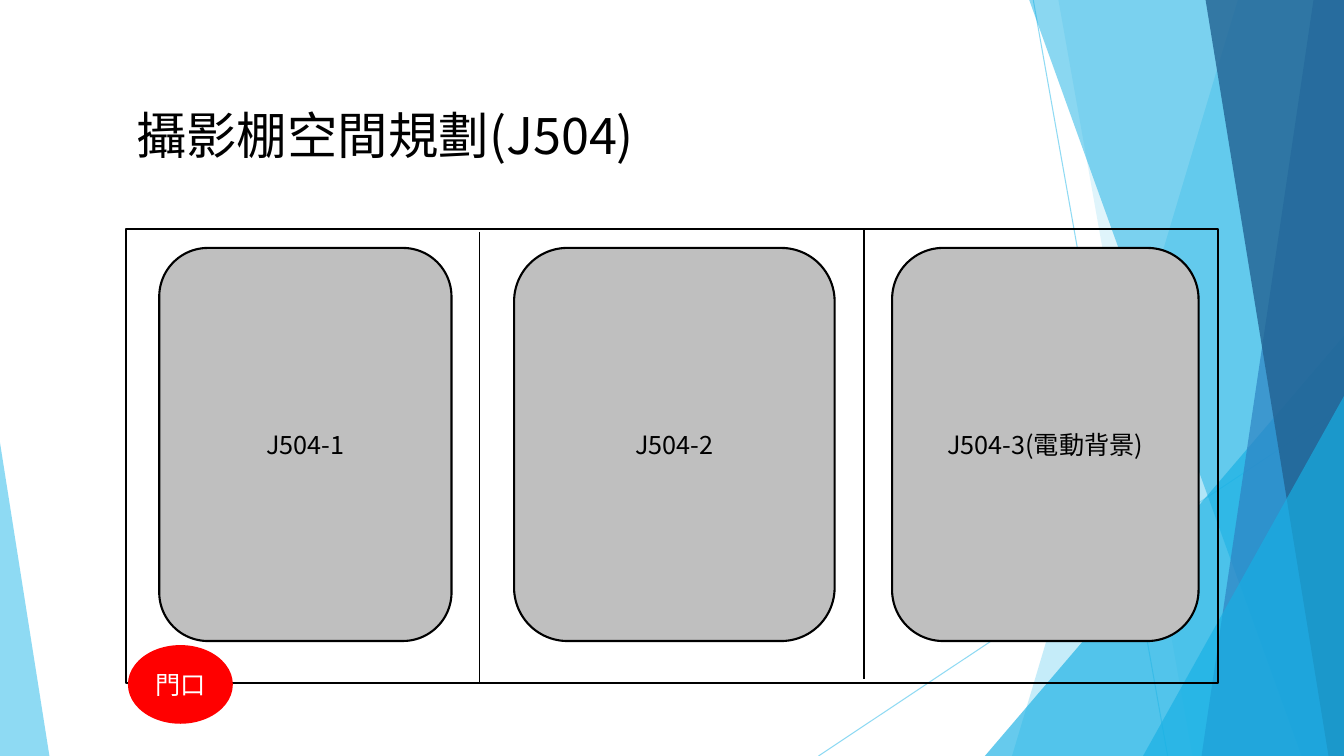
"""Draw the floor plan of the J504 photo studio on a faceted blue backdrop."""
from dataclasses import dataclass

from lxml.etree import SubElement
from pptx import Presentation
from pptx.dml.color import RGBColor
from pptx.enum.shapes import MSO_CONNECTOR, MSO_SHAPE
from pptx.enum.text import MSO_ANCHOR, PP_ALIGN
from pptx.oxml.ns import qn
from pptx.util import Inches, Pt

WIDTH, HEIGHT = Inches(13.33), Inches(7.5)
CJK, LATIN = "Noto Sans CJK SC", "Lato"
COLOURS = {
    "sky": "5FCBEF", "cyan": "17B0E4", "blue": "2E83C3", "navy": "226292",
    "ink": "000000", "paper": "FFFFFF", "floor": "BFBFBF", "door": "FF0000",
}
TITLE_FRAME = {"word_wrap": True, "vertical_anchor": MSO_ANCHOR.TOP}
LABEL_FRAME = {"word_wrap": True, "vertical_anchor": MSO_ANCHOR.MIDDLE}


@dataclass(frozen=True)
class Box:
    """Place and size in percent of the slide."""
    left: float
    top: float
    width: float
    height: float

    def emu(self) -> tuple[int, int, int, int]:
        return (*point(self.left, self.top), *point(self.width, self.height))


@dataclass(frozen=True)
class Facet:
    """Full-height panel reaching the right edge of the slide."""
    top_left: float
    bottom_left: float
    colour: str
    opacity: int


@dataclass(frozen=True)
class Wedge:
    """Right-angled triangle with its tip at the given share of its width."""
    box: Box
    tip: float
    colour: str
    opacity: int


@dataclass(frozen=True)
class Stroke:
    start: tuple[float, float]
    end: tuple[float, float]
    colour: str
    weight: float
    opacity: int = 100


@dataclass(frozen=True)
class Area:
    """Outlined part of the floor plan."""
    outline: MSO_SHAPE
    box: Box
    fill: str | None
    edge: str
    label: str = ""
    font: str = CJK
    ink: str = "ink"


RAYS = [
    Stroke((76.88, 0), (86.88, 100), "sky", 0.75, 70),
    Stroke((100, 53.73), (60.9, 100), "sky", 0.75, 70),
]
BACKDROP = [
    Facet(92.1, 75.3, "sky", 36),
    Facet(78.75, 88.73, "sky", 20),
    Wedge(Box(73.28, 44.4, 26.72, 55.6), 1, "cyan", 66),
    Facet(76.58, 96.83, "cyan", 50),
    Facet(97.73, 89.4, "blue", 70),
    Facet(89.7, 98.85, "navy", 80),
    Wedge(Box(85.05, 52.4, 14.95, 47.6), 1, "cyan", 66),
    Wedge(Box(0, 58.53, 3.68, 41.47), 0, "sky", 70),
]
ROOM = Area(MSO_SHAPE.RECTANGLE, Box(9.38, 30.27, 81.23, 60.13), None, "ink")
DIVIDERS = [
    Stroke((35.7, 30.67), (35.7, 90.4), "ink", 1),
    Stroke((64.28, 30.27), (64.28, 89.87), "ink", 1),
]
BOOTHS = [
    Area(MSO_SHAPE.ROUNDED_RECTANGLE, Box(left, 32.8, width, 52), "floor", "ink", label)
    for left, width, label in [
        (11.85, 21.75, "J504-1"),
        (38.25, 23.85, "J504-2"),
        (66.38, 22.8, "J504-3(電動背景)"),
    ]
]
DOOR = Area(MSO_SHAPE.OVAL, Box(9.6, 85.47, 7.65, 10.13), "door", "door", "門口", LATIN, "paper")


def point(x: float, y: float) -> tuple[int, int]:
    return round(WIDTH * x / 100), round(HEIGHT * y / 100)


def rgb(name: str) -> RGBColor:
    return RGBColor.from_string(COLOURS[name])


def apply(target, values: dict) -> None:
    for name, value in values.items():
        setattr(target, name, value)


def set_opacity(shape, percent: int) -> None:
    for colour in shape._element.spPr.iter(qn("a:srgbClr")):
        SubElement(colour, qn("a:alpha"), val=str(percent * 1000))


def write(shape, text: str, size: int, font: str, ink: str, align: PP_ALIGN, frame: dict) -> None:
    apply(shape.text_frame, frame)
    paragraph = shape.text_frame.paragraphs[0]
    paragraph.alignment = align
    run = paragraph.add_run()
    run.text = text
    run.font.color.rgb = rgb(ink)
    apply(run.font, {"size": Pt(size), "name": font})
    SubElement(run._r.get_or_add_rPr(), qn("a:ea"), typeface=font)


def draw_stroke(slide, stroke: Stroke) -> None:
    line = slide.shapes.add_connector(
        MSO_CONNECTOR.STRAIGHT, *point(*stroke.start), *point(*stroke.end))
    line.line.color.rgb = rgb(stroke.colour)
    line.line.width = Pt(stroke.weight)
    set_opacity(line, stroke.opacity)
    SubElement(line._element.spPr, qn("a:effectLst"))


def draw_panel(slide, panel: Facet | Wedge) -> None:
    if isinstance(panel, Facet):
        builder = slide.shapes.build_freeform(*point(panel.top_left, 0))
        builder.add_line_segments(
            [point(100, 0), point(100, 100), point(panel.bottom_left, 100)], close=True)
        shape = builder.convert_to_shape()
    else:
        shape = slide.shapes.add_shape(MSO_SHAPE.ISOSCELES_TRIANGLE, *panel.box.emu())
        shape.adjustments[0] = panel.tip
    shape.shadow.inherit = False
    shape.fill.solid()
    shape.fill.fore_color.rgb = rgb(panel.colour)
    shape.line.fill.background()
    set_opacity(shape, panel.opacity)


def draw_area(slide, area: Area) -> None:
    shape = slide.shapes.add_shape(area.outline, *area.box.emu())
    shape.shadow.inherit = False
    if area.fill:
        shape.fill.solid()
        shape.fill.fore_color.rgb = rgb(area.fill)
    else:
        shape.fill.background()
    shape.line.color.rgb = rgb(area.edge)
    shape.line.width = Pt(1.5)
    if area.label:
        write(shape, area.label, 18, area.font, area.ink, PP_ALIGN.CENTER, LABEL_FRAME)


def main() -> None:
    deck = Presentation()
    apply(deck, {"slide_width": WIDTH, "slide_height": HEIGHT})
    slide = deck.slides.add_slide(deck.slide_layouts[5])

    heading = slide.shapes.title
    left, top, width, height = Box(9.38, 13.07, 81.23, 15.2).emu()
    apply(heading, {"left": left, "top": top, "width": width, "height": height})
    write(heading, "攝影棚空間規劃(J504)", 36, CJK, "ink", PP_ALIGN.LEFT, TITLE_FRAME)

    for ray in RAYS:
        draw_stroke(slide, ray)
    for panel in BACKDROP:
        draw_panel(slide, panel)
    draw_area(slide, ROOM)
    for divider in DIVIDERS:
        draw_stroke(slide, divider)
    for area in [*BOOTHS, DOOR]:
        draw_area(slide, area)
    deck.save("out.pptx")


if __name__ == "__main__":
    main()
